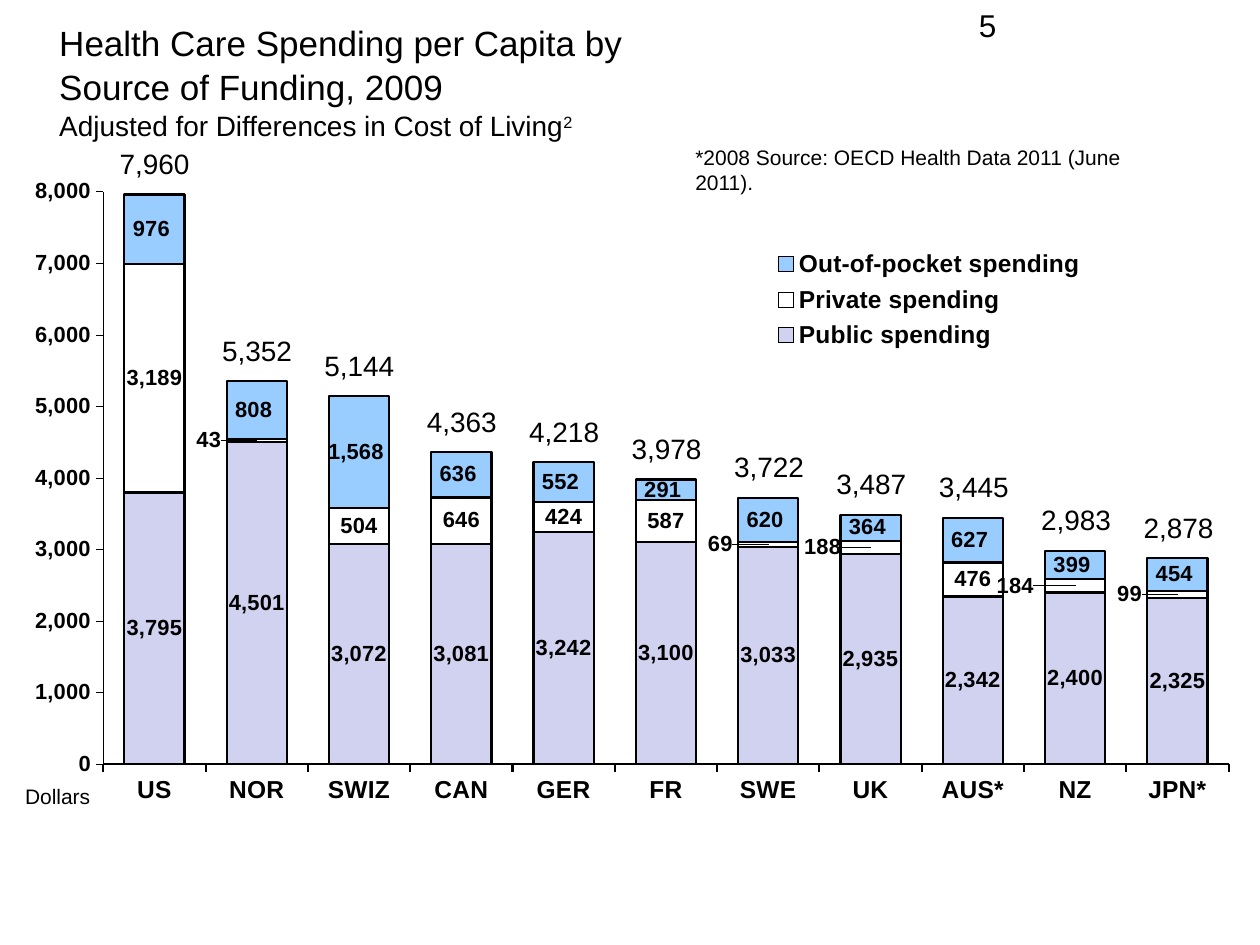
import lxml.etree
import pptx
import pptx.chart.data
import pptx.dml.color
import pptx.enum.chart
import pptx.enum.text
import pptx.oxml.ns
import pptx.util

Inches, Pt = pptx.util.Inches, pptx.util.Pt
ALIGN = pptx.enum.text.PP_ALIGN
qn = pptx.oxml.ns.qn
BLACK = "000000"


def style(font, size, bold=False, color=BLACK):
    font.name, font.size, font.bold = "Arial", Pt(size), bold
    font.color.rgb = pptx.dml.color.RGBColor.from_string(color)


def add_text(left, top, width, height, text, size, align=ALIGN.LEFT, wrap=True):
    box = slide.shapes.add_textbox(*map(Inches, (left, top, width, height)))
    box.text_frame.word_wrap = wrap
    para = box.text_frame.paragraphs[0]
    para.alignment = align
    span = para.add_run()
    span.text = text
    style(span.font, size)


deck = pptx.Presentation()
deck.slide_width, deck.slide_height = Inches(10), Inches(7.5)
slide = deck.slides.add_slide(deck.slide_layouts[5])

# Title
title = slide.shapes.title
title.left, title.top, title.width, title.height = map(Inches, (0, 0.1, 5.42, 0.8))
frame = title.text_frame
frame.word_wrap = True
frame.auto_size = pptx.enum.text.MSO_AUTO_SIZE.NONE
frame.vertical_anchor = pptx.enum.text.MSO_ANCHOR.TOP
frame.margin_left = Inches(0.47)
para = frame.paragraphs[0]
para.alignment = ALIGN.LEFT
para.line_spacing = 1.05
for text, size in (("Health Care Spending per Capita by Source of Funding, 2009", 20),
                   ("Adjusted for Differences in Cost of Living", 16), ("2", 16)):
    span = para.add_run()
    span.text = text
    style(span.font, size)
    if size == 20:
        para.add_line_break()
span._r.get_or_add_rPr().set("baseline", "30000")

add_text(7.67, 0, 2.33, 0.52, "5", 18)

# Chart
countries = ["US", "NOR", "SWIZ", "CAN", "GER", "FR", "SWE", "UK", "AUS*", "NZ", "JPN*"]
spending = [
    ("Public spending", "D1D1F0", "#,##0",
     [3795, 4501, 3072, 3081, 3242, 3100, 3033, 2935, 2342, 2400, 2325]),
    ("Private spending", "FFFFFF", "#,##0",
     [3189, 43, 504, 646, 424, 587, 69, 188, 476, 184, 99]),
    ("Out-of-pocket spending", "99CCFF", r"#,##0_);[Red]\(#,##0\)",
     [976, 808, 1568, 636, 552, 291, 620, 364, 627, 399, 454]),
]
chart_left, chart_top, chart_width, chart_height = 0.25, 1.37, 9.51, 5.05
plot_share = {"x": 0.06, "y": 0.03, "w": 0.94, "h": 0.9}
legend_share = {"x": 0.61, "y": 0.11, "w": 0.28, "h": 0.18}
axis_max = 8000

data = pptx.chart.data.CategoryChartData()
data.categories = countries
for name, color, number_format, values in spending:
    data.add_series(name, values)
chart = slide.shapes.add_chart(
    pptx.enum.chart.XL_CHART_TYPE.COLUMN_STACKED,
    *map(Inches, (chart_left, chart_top, chart_width, chart_height)), data).chart
chart.has_title = False
style(chart.font, 13.5)
chart.font.name = "Times New Roman"

plot = chart.plots[0]
plot.gap_width, plot.overlap, plot.vary_by_categories = 70, 100, False
for series, (name, color, number_format, values) in zip(plot.series, spending):
    series.format.fill.solid()
    series.format.fill.fore_color.rgb = pptx.dml.color.RGBColor.from_string(color)
    series.format.line.color.rgb = pptx.dml.color.RGBColor.from_string(BLACK)
    series.format.line.width = Pt(1.25)
    labels = series.data_labels
    labels.show_value = True
    labels.number_format, labels.number_format_is_linked = number_format, False
    labels.position = pptx.enum.chart.XL_LABEL_POSITION.CENTER
    style(labels.font, 12.5, True)

for axis, size, width in ((chart.category_axis, 14, 1.25), (chart.value_axis, 12.5, 0.31)):
    axis.has_major_gridlines = False
    axis.major_tick_mark = pptx.enum.chart.XL_TICK_MARK.OUTSIDE
    axis.format.line.color.rgb = pptx.dml.color.RGBColor.from_string(BLACK)
    axis.format.line.width = Pt(width)
    style(axis.tick_labels.font, size, True)
scale = chart.value_axis
scale.minimum_scale, scale.maximum_scale, scale.major_unit = 0, axis_max, 1000
scale.tick_labels.number_format = "#,##0"
scale.tick_labels.number_format_is_linked = False

chart.has_legend = True
chart.legend.position = pptx.enum.chart.XL_LEGEND_POSITION.RIGHT
chart.legend.include_in_layout = False
style(chart.legend.font, 14, True)

# Labels of thin private segments stand to the left of their columns
layouts = []
private = plot.series[1]
for index, shift in ((1, -0.04), (6, -0.04), (7, -0.04), (9, -0.05), (10, -0.04)):
    label = private.points[index].data_label
    label.position = pptx.enum.chart.XL_LABEL_POSITION.CENTER
    style(label.font, 12.5, True)
    node = private._element.xpath(f"c:dLbls/c:dLbl[c:idx/@val='{index}']")[0]
    layouts.append((node.find(qn("c:idx")), {"x": shift, "y": 0}))

plot_area = chart._chartSpace.chart.plotArea
for old in plot_area.findall(qn("c:layout")):
    plot_area.remove(old)
plot_area.insert(0, lxml.etree.Element(qn("c:layout")))
legend_node = chart.legend._element
for old in legend_node.findall(qn("c:layout")):
    legend_node.remove(old)
layouts.append((legend_node.find(qn("c:legendPos")),
                {"xMode": "edge", "yMode": "edge", **legend_share}))
layouts.append((plot_area[0], {"layoutTarget": "inner", "xMode": "edge",
                               "yMode": "edge", **plot_share}))
for anchor, settings in layouts:
    layout = anchor
    if anchor.tag != qn("c:layout"):
        layout = lxml.etree.Element(qn("c:layout"))
        anchor.addnext(layout)
    manual = lxml.etree.SubElement(layout, qn("c:manualLayout"))
    for key, value in settings.items():
        lxml.etree.SubElement(manual, qn(f"c:{key}")).set("val", str(value))

add_text(0.1, 6.17, 0.72, 0.3, "Dollars", 12, wrap=False)

# Totals above the columns
column = chart_width * plot_share["w"] / len(countries)
plot_left = chart_left + chart_width * plot_share["x"]
plot_top = chart_top + chart_height * plot_share["y"]
plot_height = chart_height * plot_share["h"]
total_width, total_height, lift = 0.87, 0.37, 0.43
for index, parts in enumerate(zip(*(values for *rest, values in spending))):
    total = sum(parts)
    add_text(plot_left + (index + 0.5) * column - total_width / 2,
             plot_top + plot_height * (1 - total / axis_max) - lift,
             total_width, total_height, f"{total:,}", 16, ALIGN.CENTER)

add_text(5.42, 1.1, 4.08, 0.3, "*2008 Source: OECD Health Data 2011 (June 2011).", 12)

deck.save("out.pptx")
